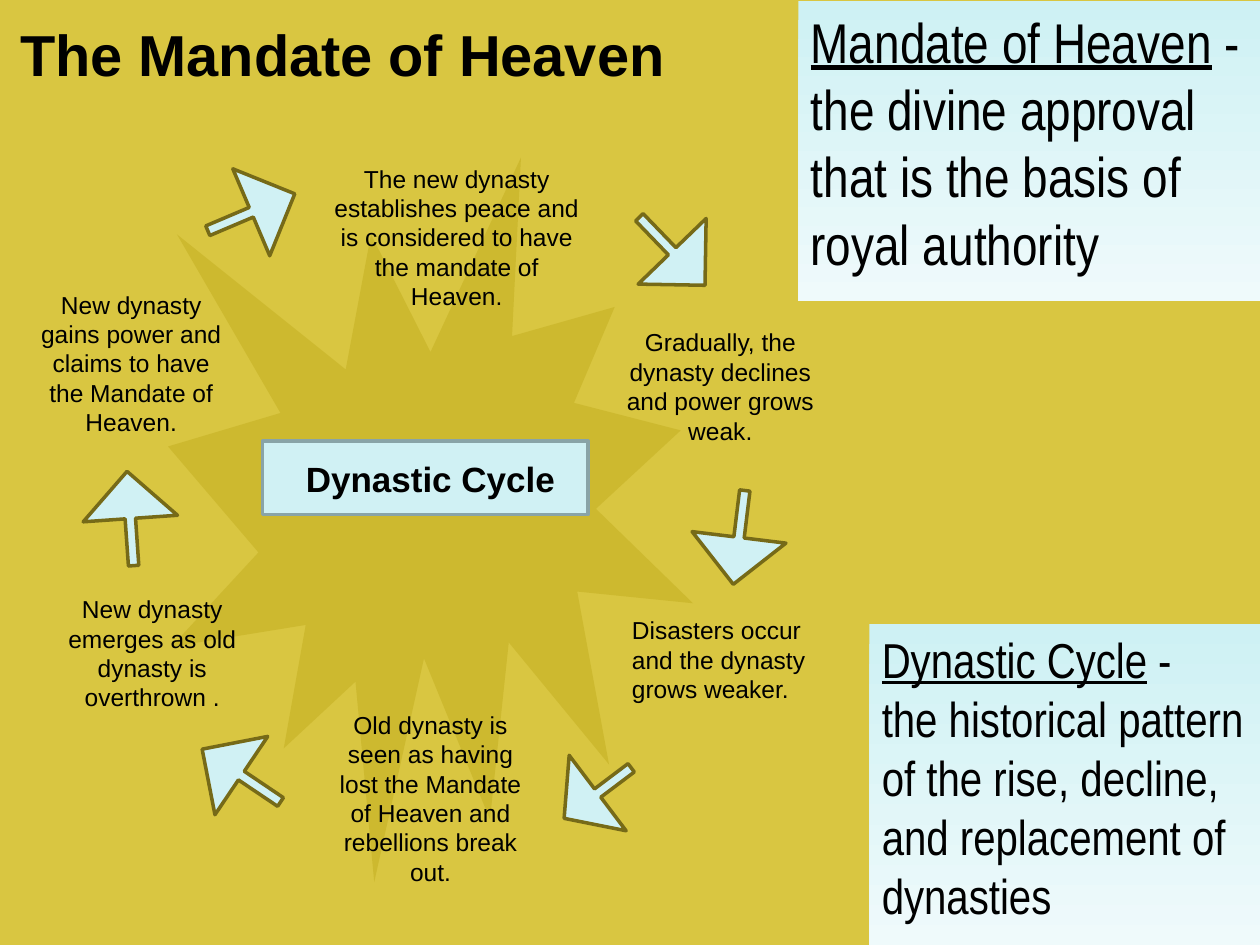
import pptx
import pptx.util
import pptx.dml.color
import pptx.enum.shapes
import pptx.enum.text
import pptx.oxml

Pt = pptx.util.Pt
SHAPE = pptx.enum.shapes.MSO_SHAPE
ALIGN = pptx.enum.text.PP_ALIGN
ANCHOR = pptx.enum.text.MSO_ANCHOR

GOLD, DARK_GOLD, OLIVE = "D9C641", "C8B428", "766A18"
PALE, PALER, SLATE, BLACK = "D0F1F4", "EFFAFB", "89A4A7", "000000"

# left, top, width, height, text, alignment
STAGES = [
    (12, 162, 126, 90.7, "New dynasty gains power and claims to have the Mandate of Heaven.", ALIGN.CENTER),
    (180, 90, 162, 90.7, "The new dynasty establishes peace and is considered to have the mandate of Heaven.", ALIGN.CENTER),
    (345.6, 183.6, 132, 74.2, "Gradually, the dynasty declines and power grows weak.", ALIGN.CENTER),
    (354, 348, 126, 57.6, "Disasters occur and the dynasty grows weaker.", ALIGN.LEFT),
    (186, 402, 120, 108, "Old dynasty is seen as having lost the Mandate of Heaven and rebellions break out.", ALIGN.CENTER),
    (24, 336, 126, 74.2, "New dynasty emerges as old dynasty is overthrown .", ALIGN.CENTER),
]

# left, top, width, rotation
ARROWS = [
    (116.6, 94.3, 54, 337),
    (357.1, 116.6, 54, 46),
    (395.3, 280.1, 54, 97),
    (317.5, 426.2, 48, 143),
    (110.9, 416.2, 54, 214),
    (47.5, 269.3, 54, 266),
]


def rgb(value):
    return pptx.dml.color.RGBColor.from_string(value)


def add_text(p, text, size=14, font="Arial", bold=False, underline=False):
    r = p.add_run()
    r.text = text
    r.font.size = Pt(size)
    r.font.name = font
    r.font.bold = bold
    r.font.underline = underline
    r.font.color.rgb = rgb(BLACK)


def set_frame(sp, align, anchor=ANCHOR.TOP):
    """Wrap and align the shape's text; return its first paragraph."""
    tf = sp.text_frame
    tf.word_wrap = True
    tf.auto_size = pptx.enum.text.MSO_AUTO_SIZE.NONE
    tf.vertical_anchor = anchor
    tf.paragraphs[0].alignment = align
    return tf.paragraphs[0]


def add_shape(s, kind, box, fill=PALE, line=None):
    sp = s.shapes.add_shape(kind, *map(Pt, box))
    sp.shadow.inherit = False
    sp.fill.solid()
    sp.fill.fore_color.rgb = rgb(fill)
    if line:
        sp.line.color.rgb = rgb(line)
        sp.line.width = Pt(2)
    else:
        sp.line.fill.background()
    return sp


def add_burst(s):
    sp = add_shape(s, SHAPE.EXPLOSION1, (96, 90, 300, 414), DARK_GOLD)
    color = sp.fill._xPr.find(".//" + pptx.oxml.ns.qn("a:srgbClr"))
    alpha = pptx.oxml.parse_xml(
        '<a:alpha %s val="69000"/>' % pptx.oxml.ns.nsdecls("a"))
    color.append(alpha)


def add_arrow(s, left, top, width, rotation):
    sp = add_shape(s, SHAPE.RIGHT_ARROW, (left, top, width, 54), line=OLIVE)
    sp.adjustments[0] = 0.11
    sp.adjustments[1] = 0.5
    sp.rotation = rotation


def add_stage(s, left, top, width, height, text, align):
    sp = s.shapes.add_textbox(Pt(left), Pt(top), Pt(width), Pt(height))
    add_text(set_frame(sp, align), text)


def add_definition(s, box, size, term, *parts):
    """Add a shaded panel: an underlined term, then one paragraph per part."""
    sp = add_shape(s, SHAPE.RECTANGLE, box)
    sp.fill.gradient()
    sp.fill.gradient_angle = 270
    for stop, color in zip(sp.fill.gradient_stops, ("CEF1F4", PALER)):
        stop.color.rgb = rgb(color)
    p = set_frame(sp, ALIGN.LEFT)
    add_text(p, term, size, "Arial Narrow", underline=True)
    add_text(p, parts[0], size, "Arial Narrow")
    for part in parts[1:]:
        p = sp.text_frame.add_paragraph()
        p.alignment = ALIGN.LEFT
        add_text(p, part, size, "Arial Narrow")


def add_title(s, text):
    sp = s.shapes.title
    sp.left, sp.top, sp.width, sp.height = map(Pt, (4.3, 7.2, 448, 46.8))
    add_text(set_frame(sp, ALIGN.LEFT), text, 33, bold=True)


def main():
    prs = pptx.Presentation()
    prs.slide_width, prs.slide_height = Pt(720), Pt(540)
    s = prs.slides.add_slide(prs.slide_layouts[5])
    s.background.fill.solid()
    s.background.fill.fore_color.rgb = rgb(GOLD)

    add_title(s, "The Mandate of Heaven")
    add_burst(s)
    for arrow in ARROWS:
        add_arrow(s, *arrow)
    for stage in STAGES:
        add_stage(s, *stage)

    add_shape(s, SHAPE.RECTANGLE, (150, 252, 186, 42), line=SLATE)
    label = add_shape(s, SHAPE.RECTANGLE, (162, 258, 168, 31))
    add_text(set_frame(label, ALIGN.CENTER), "Dynastic Cycle", 20, bold=True)

    add_definition(s, (456.2, 0.7, 263.8, 171.4), 32, "Mandate of Heaven",
                   " - the divine approval that is the basis of royal authority")
    add_definition(s, (496.8, 356.4, 223.2, 183.6), 28, "Dynastic Cycle", " -",
                   "the historical pattern of the rise, decline, and replacement of dynasties")
    prs.save("out.pptx")


if __name__ == "__main__":
    main()
